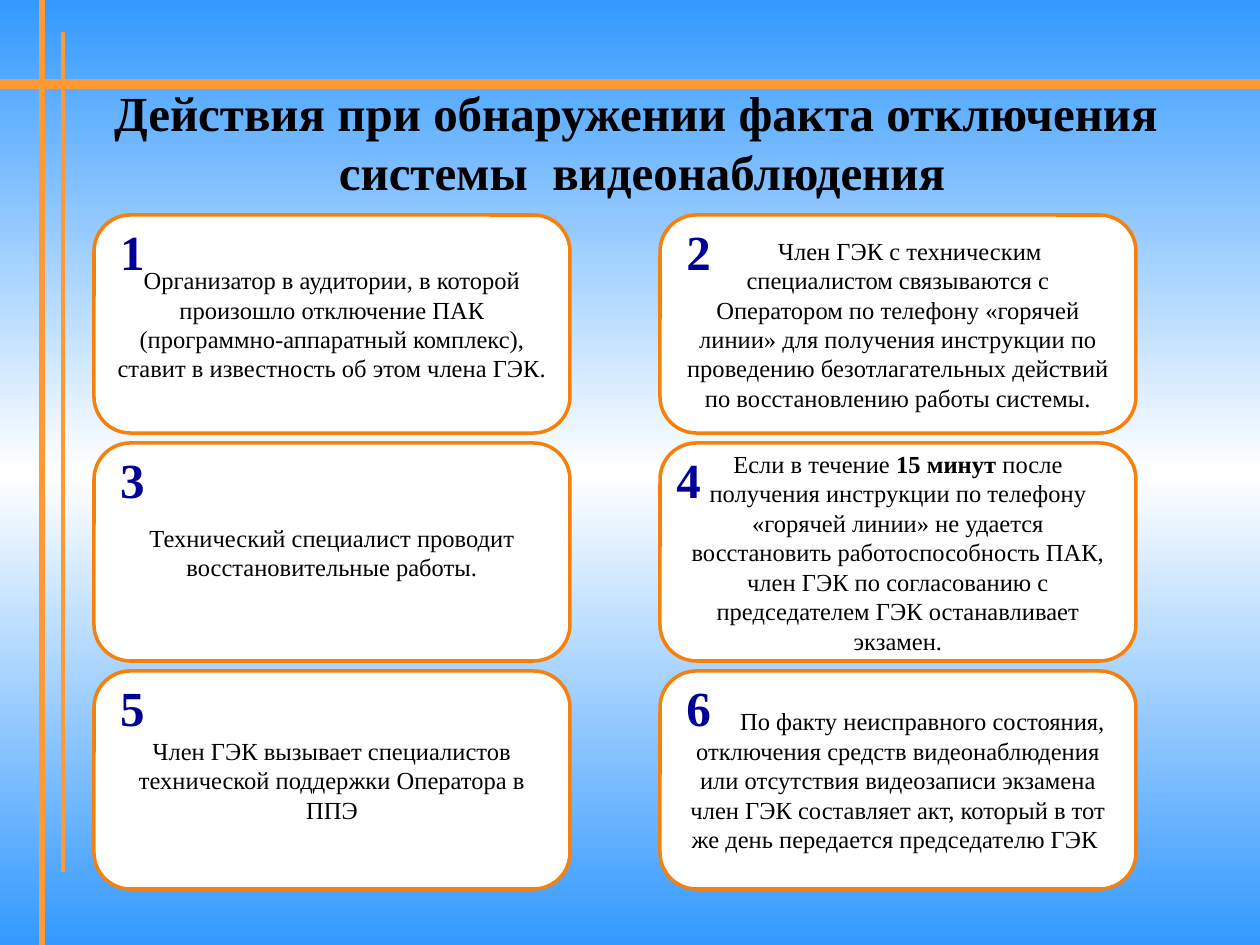
from copy import deepcopy

from lxml import etree
from pptx import Presentation
from pptx import util as u
from pptx.dml.color import RGBColor
from pptx.enum import shapes, text
from pptx.oxml.ns import qn

PX = 914400 // 126
FONT = "Times New Roman"


def rgb(value):
    return RGBColor.from_string(value)


def write(p, runs, color, **fmt):
    """Add centred runs, given as (words, bold) pairs, to a paragraph."""
    p.alignment = text.PP_ALIGN.CENTER
    for words, bold in runs:
        r = p.add_run()
        r.text = words
        for name, value in {"name": FONT, "bold": bold, **fmt}.items():
            setattr(r.font, name, value)
        r.font.color.rgb = rgb(color)


prs = Presentation()
prs.slide_width, prs.slide_height = 1260 * PX, 945 * PX
s = prs.slides.add_slide(prs.slide_layouts[5])

# Background: blue, white, blue from top to bottom
fill = s.background.fill
fill.gradient()
fill.gradient_angle = 270
for stop in fill.gradient_stops:
    stop.color.rgb = rgb("3399FF")
gs = s.background._cSld.find(".//" + qn("a:gs"))
gs.addnext(deepcopy(gs))
middle = fill.gradient_stops[1]
middle.position = 0.5
middle.color.rgb = rgb("FFFFFF")

# Orange rules
for x1, y1, x2, y2, width in [
    (0, 84, 1260, 84, 6),
    (42, 0, 42, 945, 3),
    (63, 32, 63, 872, 2.25),
]:
    line = s.shapes.add_connector(
        shapes.MSO_CONNECTOR.STRAIGHT, x1 * PX, y1 * PX, x2 * PX, y2 * PX)
    line.line.color.rgb = rgb("FF9933")
    line.line.width = u.Pt(width)
    etree.SubElement(line._element.spPr, qn("a:effectLst"))

# Title on two lines
title = s.shapes.title
title.left, title.top, title.width, title.height = 54 * PX, 76 * PX, 1176 * PX, 148 * PX
tf = title.text_frame
tf.vertical_anchor = text.MSO_ANCHOR.TOP
p = tf.paragraphs[0]
write(p, [("Действия при обнаружении факта отключения ", True)], "000000", size=u.Pt(28))
p.add_line_break()
write(p, [("системы  видеонаблюдения", True)], "000000", size=u.Pt(28))

# Step cards: runs, first-line indent, offset of the number
steps = [
    ([("Организатор в аудитории, в которой произошло отключение ПАК "
       "(программно-аппаратный комплекс), ставит в известность об этом члена ГЭК.", False)], 0, 10),
    ([("Член ГЭК с техническим специалистом связываются с Оператором по телефону "
       "«горячей линии» для получения инструкции по проведению безотлагательных "
       "действий по восстановлению работы системы.", False)], 24, 10),
    ([("Технический специалист проводит восстановительные работы.", False)], 0, 10),
    ([("Если в течение ", False), ("15 минут", True),
      (" после получения инструкции по телефону «горячей линии» не удается восстановить "
       "работоспособность ПАК, член ГЭК по согласованию с председателем ГЭК "
       "останавливает экзамен.", False)], 0, 0),
    ([("Член ГЭК вызывает специалистов технической поддержки Оператора в ППЭ", False)], 0, 10),
    ([("По факту неисправного состояния, отключения средств видеонаблюдения или "
       "отсутствия видеозаписи экзамена член ГЭК составляет акт, который в тот же день "
       "передается председателю ГЭК ", False)], 49, 10),
]
for i, (runs, indent, offset) in enumerate(steps):
    row, col = divmod(i, 2)
    x, y = 94 + col * 566, 215 + row * 228

    card = s.shapes.add_shape(
        shapes.MSO_SHAPE.ROUNDED_RECTANGLE, x * PX, y * PX, 476 * PX, 218 * PX)
    card.shadow.inherit = False
    card.fill.solid()
    card.fill.fore_color.rgb = rgb("FFFFFF")
    card.line.color.rgb = rgb("F5800B")
    card.line.width = u.Pt(2)
    tf = card.text_frame
    tf.word_wrap = True
    tf.vertical_anchor = text.MSO_ANCHOR.MIDDLE
    p = tf.paragraphs[0]
    p._p.get_or_add_pPr().set("indent", str(indent * PX))
    write(p, runs, "000000", size=u.Pt(14))

    number = s.shapes.add_textbox((x + offset) * PX, y * PX, 57 * PX, 72 * PX)
    number.text_frame.word_wrap = True
    write(number.text_frame.paragraphs[0], [(str(i + 1), True)], "000099", size=u.Pt(28))

prs.save("out.pptx")
